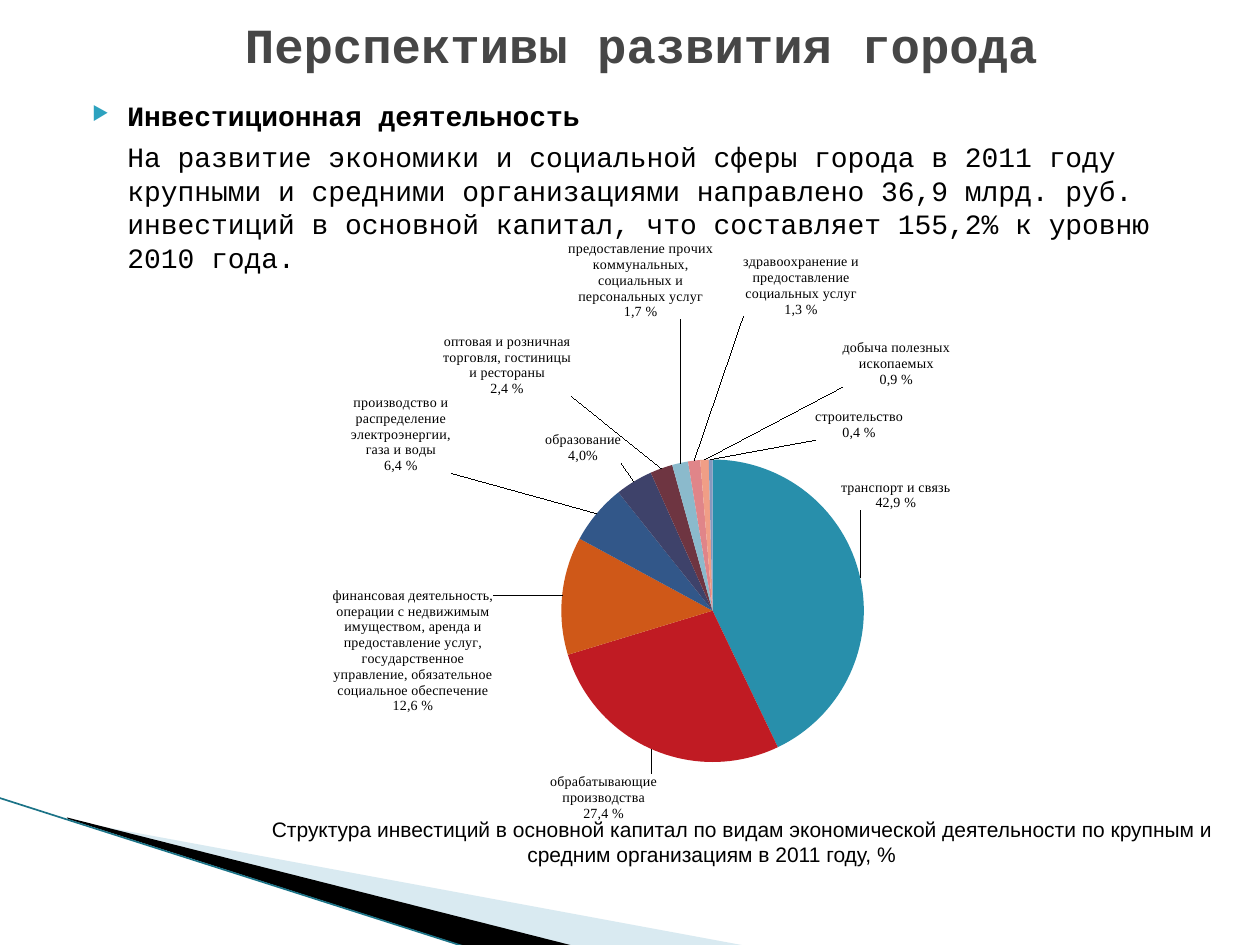
from lxml import etree
from pptx import Presentation
from pptx.chart.data import CategoryChartData
from pptx.dml.color import RGBColor
from pptx.enum.chart import XL_CHART_TYPE, XL_LABEL_POSITION
from pptx.enum.shapes import MSO_CONNECTOR
from pptx.enum.text import MSO_ANCHOR, PP_ALIGN
from pptx.oxml import parse_xml
from pptx.oxml.ns import nsdecls, qn
from pptx.util import Cm, Pt

PIE = XL_CHART_TYPE.PIE
OUTSIDE = XL_LABEL_POSITION.OUTSIDE_END
STRAIGHT = MSO_CONNECTOR.STRAIGHT
MIDDLE, TOP = MSO_ANCHOR.MIDDLE, MSO_ANCHOR.TOP
CENTER, LEFT = PP_ALIGN.CENTER, PP_ALIGN.LEFT

# label lines, share as text, value, slice colour, label shift (fractions of the chart)
SLICES = [
    (["транспорт и связь"], "42,9 %", 42.9, "288FAB", (-0.03, -0.11)),
    (["обрабатывающие", "производства"], "27,4 %", 27.4, "C01B23", (0.01, 0.03)),
    (["финансовая деятельность,", "операции с недвижимым", "имуществом, аренда и",
      "предоставление услуг,", "государственное", "управление, обязательное",
      "социальное обеспечение"], "12,6 %", 12.6, "CF5818", (-0.07, 0.2)),
    (["производство и", "распределение", "электроэнергии,", "газа и воды"],
     "6,4 %", 6.4, "325789", (-0.16, -0.06)),
    (["образование"], "4,0%", 4, "3E426A", (-0.01, -0.02)),
    (["оптовая и розничная", "торговля, гостиницы", "и рестораны"],
     "2,4 %", 2.4, "6E3541", (-0.1, -0.11)),
    (["предоставление прочих", "коммунальных,", "социальных и", "персональных услуг"],
     "1,7 %", 1.7, "8BBACC", (0.04, -0.23)),
    (["здравоохранение и", "предоставление", "социальных услуг"],
     "1,3 %", 1.3, "E08589", (0.19, -0.23)),
    (["добыча полезных", "ископаемых"], "0,9 %", 0.9, "F09E86", (0.22, -0.11)),
    (["строительство"], "0,4 %", 0.4, "8598BE", (0.17, -0.02)),
]


def color(hex_string):
    return RGBColor.from_string(hex_string)


def manual_layout(**values):
    """Return a c:layout element; the keys are its children in schema order."""
    children = "".join(f'<c:{key} val="{value}"/>' for key, value in values.items())
    return parse_xml(f'<c:layout {nsdecls("c")}><c:manualLayout>{children}'
                     '</c:manualLayout></c:layout>')


class SlideBuilder:
    """Holds the style and the current slide."""

    mono, serif, sans = "Courier New", "Times New Roman", "Arial"
    ink, heading, accent = "000000", "464646", "2DA2BF"

    def __init__(self, page):
        self.page = page

    def style(self, font, name, size, hex_string, bold=False):
        font.name, font.size, font.bold = name, Pt(size), bold
        font.color.rgb = color(hex_string)

    def text(self, area, lines, name, size, hex_string=ink, bold=False,
             align=LEFT, anchor=TOP):
        box = self.page.shapes.add_textbox(*map(Cm, area))
        frame = box.text_frame
        frame.word_wrap = True
        frame.vertical_anchor = anchor
        frame.text = "\n".join(lines)
        for para in frame.paragraphs:
            para.alignment = align
            for span in para.runs:
                self.style(span.font, name, size, hex_string, bold)
        return frame.paragraphs

    def indent(self, para, margin, first_line):
        props = para._p.get_or_add_pPr()
        props.set("marL", str(Cm(margin)))
        props.set("indent", str(Cm(first_line)))
        return props

    def bullet(self, para):
        props = self.indent(para, 1.02, -0.71)
        color_parent = etree.SubElement(props, qn("a:buClr"))
        etree.SubElement(color_parent, qn("a:srgbClr"), val=self.accent)
        etree.SubElement(props, qn("a:buSzPct"), val="68000")
        etree.SubElement(props, qn("a:buChar"), char="▶")

    def wedge(self, points, hex_string, opacity=100):
        corners = [(Cm(x), Cm(y)) for x, y in points]
        builder = self.page.shapes.build_freeform(*corners[0])
        builder.add_line_segments(corners[1:], close=True)
        shape = builder.convert_to_shape()
        shape.shadow.inherit = False
        shape.line.fill.background()
        shape.fill.solid()
        shape.fill.fore_color.rgb = color(hex_string)
        if opacity < 100:
            value = shape.fill._xPr.find(".//" + qn("a:srgbClr"))
            etree.SubElement(value, qn("a:alpha"), val=str(opacity * 1000))

    def line(self, start, end, hex_string, width):
        connector = self.page.shapes.add_connector(STRAIGHT, *map(Cm, start + end))
        connector.line.color.rgb = color(hex_string)
        connector.line.width = Pt(width)
        etree.SubElement(connector._element.spPr, qn("a:effectLst"))

    def pie(self, area, slices):
        data = CategoryChartData()
        data.categories = [" ".join(lines) for lines, *_ in slices]
        data.add_series("Series 1", [value for _, _, value, _, _ in slices])
        chart = self.page.shapes.add_chart(PIE, *map(Cm, area), data).chart
        chart.has_legend = chart.has_title = False
        self.style(chart.font, self.mono, 10, self.ink)
        plot = chart.plots[0]
        plot.vary_by_categories = True
        plot_area = chart._chartSpace.chart.plotArea
        for old in plot_area.findall(qn("c:layout")):
            plot_area.remove(old)
        plot_area.insert(0, manual_layout(layoutTarget="inner", xMode="edge", yMode="edge",
                                          x=0.27, y=0.38, w=0.51, h=0.51))
        series = plot.series[0]
        labels = series.data_labels
        labels.show_value = labels.show_category_name = labels.show_percentage = True
        labels.position = OUTSIDE
        self.style(labels.font, self.serif, 8, self.ink)
        for index, (lines, share, _, fill, shift) in enumerate(slices):
            point = series.points[index]
            point.format.fill.solid()
            point.format.fill.fore_color.rgb = color(fill)
            point.format.line.fill.background()
            self.slice_label(point.data_label, lines + [share], shift)

    def slice_label(self, label, lines, shift):
        frame = label.text_frame
        frame.text = "\n".join(lines)
        for para in frame.paragraphs:
            for span in para.runs:
                self.style(span.font, self.serif, 8, self.ink)
        label.position = OUTSIDE
        label._get_or_add_dLbl().insert(1, manual_layout(x=shift[0], y=shift[1]))


def main():
    deck = Presentation()
    deck.slide_width, deck.slide_height = Cm(25.4), Cm(19.05)
    slide = SlideBuilder(deck.slides.add_slide(deck.slide_layouts[6]))

    slide.wedge([(1.4, 16.54), (15.11, 19.08), (11.58, 19.08), (1.4, 16.51)], "A0CBDC", 40)
    slide.wedge([(1.35, 16.48), (11.61, 19.08), (9.45, 19.1), (1.37, 16.51)], "000000")
    slide.line((-0.03, 16.08), (9.42, 19.1), "1B7387", 0.95)

    topic, details = slide.text(
        (1.3, 1.87, 22.86, 12.4),
        ["Инвестиционная деятельность",
         "На развитие экономики и социальной сферы города в 2011 году крупными и средними "
         "организациями направлено 36,9 млрд. руб. инвестиций в основной капитал, "
         "что составляет 155,2% к уровню 2010 года."],
        slide.mono, 16)
    slide.bullet(topic)
    topic.runs[0].font.bold = True
    slide.indent(details, 1.02, 0)
    details.space_before = Pt(4)

    slide.text((1.5, -0.69, 22.86, 3.17), ["Перспективы развития города"],
               slide.mono, 28, slide.heading, True, CENTER, MIDDLE)
    slide.pie((5.11, 4.72, 17.63, 11.96), SLICES)
    caption, = slide.text(
        (3.3, 16.33, 22.1, 1.27),
        ["Структура инвестиций в основной капитал по видам экономической деятельности "
         "по крупным и средним организациям в 2011 году, %"],
        slide.sans, 12, align=CENTER, anchor=MIDDLE)
    slide.indent(caption, 0, 1.24)

    deck.save("out.pptx")


if __name__ == "__main__":
    main()
